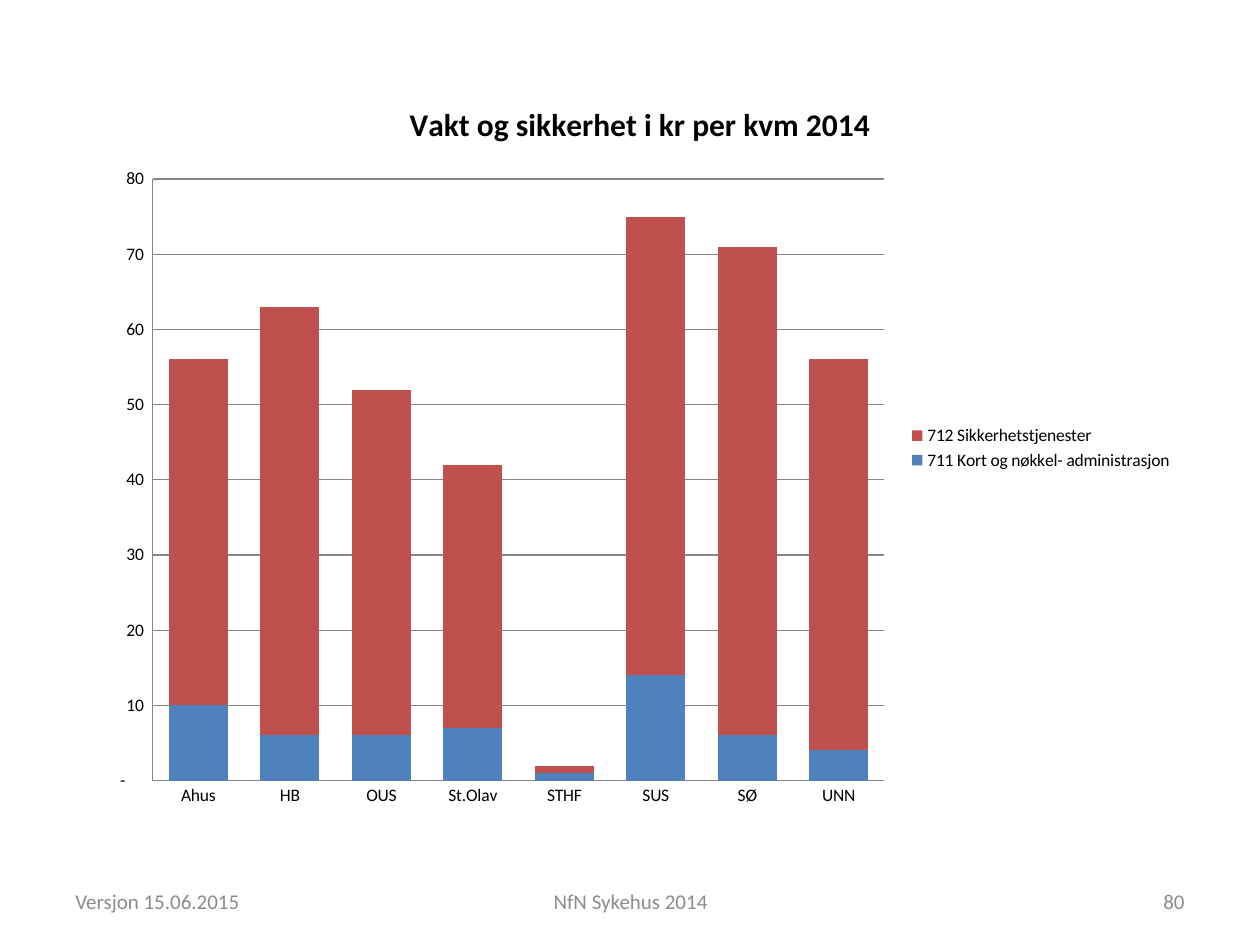
from pptx import Presentation
from pptx.chart.data import CategoryChartData
from pptx.dml.color import RGBColor
from pptx.enum.chart import XL_CHART_TYPE, XL_LEGEND_POSITION as LegendPos, XL_TICK_MARK as Tick
from pptx.enum.text import MSO_ANCHOR as Anchor, PP_ALIGN as Align
from pptx.util import Inches, Pt

BLACK = RGBColor(0x00, 0x00, 0x00)
FOOTER_GREY = RGBColor(0x8C, 0x8C, 0x8C)
LINE_GREY = RGBColor(0x86, 0x86, 0x86)
BLUE = RGBColor(0x4F, 0x81, 0xBD)
RED = RGBColor(0xC0, 0x50, 0x4D)
FONT = "Calibri"


def style_font(font, size, color, bold=False):
    font.name = FONT
    font.size = Pt(size)
    font.bold = bold
    font.color.rgb = color


prs = Presentation()
prs.slide_width, prs.slide_height = Inches(10), Inches(7.5)
slide = prs.slides.add_slide(prs.slide_layouts[6])

# Cost per square metre, by hospital
costs = CategoryChartData()
costs.categories = ["Ahus", "HB", "OUS", "St.Olav", "STHF", "SUS", "SØ", "UNN"]
costs.add_series("711 Kort og nøkkel- administrasjon", [10, 6, 6, 7, 1, 14, 6, 4])
costs.add_series("712 Sikkerhetstjenester", [46, 57, 46, 35, 1, 61, 65, 52])
chart = slide.shapes.add_chart(
    XL_CHART_TYPE.COLUMN_STACKED,
    Inches(0.75), Inches(0.6), Inches(8.66), Inches(5.91), costs,
).chart
style_font(chart.font, 10, BLACK)

# Chart title
chart.has_title = True
heading = chart.chart_title.text_frame
heading.text = "Vakt og sikkerhet i kr per kvm 2014"
style_font(heading.paragraphs[0].runs[0].font, 18, BLACK, bold=True)
chart.chart_title.include_in_layout = False

# Legend
chart.has_legend = True
chart.legend.position = LegendPos.RIGHT
chart.legend.include_in_layout = False

# Columns
columns = chart.plots[0]
columns.gap_width = 55
columns.overlap = 100
columns.vary_by_categories = False
for series, color in zip(columns.series, (BLUE, RED)):
    series.format.fill.solid()
    series.format.fill.fore_color.rgb = color

# Axes
cost_axis = chart.value_axis
for axis in (chart.category_axis, cost_axis):
    axis.major_tick_mark = axis.minor_tick_mark = Tick.NONE
    axis.format.line.color.rgb = LINE_GREY
cost_axis.minimum_scale, cost_axis.maximum_scale, cost_axis.major_unit = 0, 80, 10
cost_axis.has_major_gridlines = True
cost_axis.major_gridlines.format.line.color.rgb = LINE_GREY
cost_axis.tick_labels.number_format = '_ * #,##0_ ;_ * \\-#,##0_ ;_ * "-"??_ ;_ '
cost_axis.tick_labels.number_format_is_linked = False

# Footer: version, report name, page number
for left, width, text, align in (
    (0.5, 2.33, "Versjon 15.06.2015", Align.LEFT),
    (3.42, 3.17, "NfN Sykehus 2014", Align.CENTER),
    (7.17, 2.33, "80", Align.RIGHT),
):
    footer = slide.shapes.add_textbox(
        Inches(left), Inches(6.95), Inches(width), Inches(0.4)
    ).text_frame
    footer.word_wrap = True
    footer.vertical_anchor = Anchor.MIDDLE
    footer.text = text
    paragraph = footer.paragraphs[0]
    paragraph.alignment = align
    style_font(paragraph.runs[0].font, 12, FOOTER_GREY)

prs.save("out.pptx")
